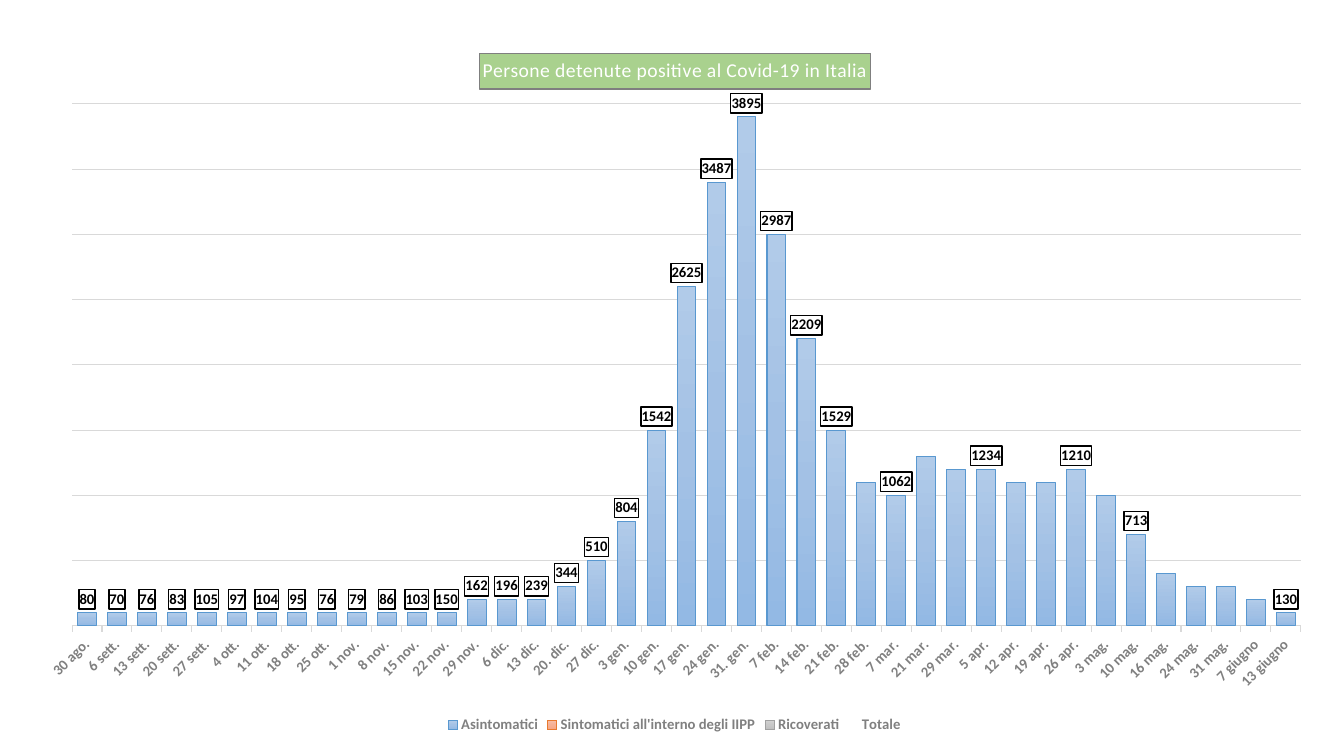
from copy import deepcopy
from dataclasses import dataclass

from lxml import etree
from pptx import Presentation
from pptx import util as u
from pptx.chart.data import CategoryChartData
from pptx.dml.color import RGBColor
from pptx.enum import chart as c
from pptx.oxml import parse_xml
from pptx.oxml.ns import nsdecls, qn

EMU_PER_PX = 914400 / 100.8
CHART_NS = nsdecls("c")


@dataclass(frozen=True)
class Box:
    left: int
    top: int
    width: int
    height: int


@dataclass(frozen=True)
class Column:
    name: str
    values: list[int]
    shades: tuple[str, str, str]
    outline: str


FRAME = Box(23, 34, 1303, 704)
PLOT = Box(72, 104, 1229, 522)
TITLE = Box(479, 53, 393, 37)

DATES = [
    "30 ago.", "6 sett.", "13 sett.", "20 sett.", "27 sett.", "4 ott.", "11 ott.",
    "18 ott.", "25 ott.", "1 nov.", "8 nov.", "15 nov.", "22 nov.", "29 nov.",
    "6 dic.", "13 dic.", "20. dic.", "27 dic.", "3 gen.", "10 gen.", "17 gen.",
    "24 gen.", "31. gen.", "7 feb.", "14 feb.", "21 feb.", "28 feb.", "7 mar.",
    "21 mar.", "29 mar.", "5 apr.", "12 apr.", "19 apr.", "26 apr.", "3 mag.",
    "10 mag.", "16 mag.", "24 mag.", "31 mag.", "7 giugno", "13 giugno",
]
TOTALS = [
    80, 70, 76, 83, 105, 97, 104, 95, 76, 79, 86, 103, 150, 162, 196, 239, 344, 510,
    804, 1542, 2625, 3487, 3895, 2987, 2209, 1529, 1160, 1062, 1341, 1208, 1234,
    1080, 1069, 1210, 1022, 713, 420, 302, 256, 164, 130,
]
ASYMPTOMATIC = [100] * 13 + [
    200, 200, 200, 300, 500, 800, 1500, 2600, 3400, 3900, 3000, 2200, 1500, 1100,
    1000, 1300, 1200, 1200, 1100, 1100, 1200, 1000, 700, 400, 300, 300, 200, 100,
]
NONE = [0] * len(DATES)
UNLABELLED = [26, 28, 29, 31, 32, 34, 36, 37, 38, 39]

COLUMNS = [
    Column("Asintomatici", ASYMPTOMATIC, ("B1CBE9", "A3C1E5", "93B9E4"), "5998D0"),
    Column("Sintomatici all'interno degli IIPP", NONE,
           ("F7BDA5", "F5B196", "F8A582"), "E87A30"),
    Column("Ricoverati", NONE, ("D2D2D2", "C8C8C8", "C0C0C0"), "A1A1A1"),
]


def px(length: int) -> int:
    return round(length * EMU_PER_PX)


def paint(color, value: str) -> None:
    color.rgb = RGBColor.from_string(value)


def set_line(line, color: str, width: float = 0.75) -> None:
    paint(line.color, color)
    line.width = u.Pt(width)


def set_font(font, size: float, color: str, bold: bool) -> None:
    font.name, font.size, font.bold = "Calibri", u.Pt(size), bold
    paint(font.color, color)


def place(element, box: Box, index: int, inner: bool = False) -> None:
    for layout in element.findall(qn("c:layout")):
        element.remove(layout)
    layout = etree.Element(qn("c:layout"))
    manual = etree.SubElement(layout, qn("c:manualLayout"))
    settings = {"layoutTarget": "inner"} if inner else {}
    settings |= {"xMode": "edge", "yMode": "edge"}
    settings["x"] = f"{(box.left - FRAME.left) / FRAME.width:.4f}"
    settings["y"] = f"{(box.top - FRAME.top) / FRAME.height:.4f}"
    if inner:
        settings["w"] = f"{box.width / FRAME.width:.4f}"
        settings["h"] = f"{box.height / FRAME.height:.4f}"
    for tag, value in settings.items():
        etree.SubElement(manual, qn(f"c:{tag}")).set("val", value)
    element.insert(index, layout)


def style_column(series, column: Column) -> None:
    fill = series.format.fill
    fill.gradient()
    fill.gradient_angle = 270
    first, middle, last = column.shades
    for stop, shade, position in zip(fill.gradient_stops, (first, last), (0, 1)):
        paint(stop.color, shade)
        stop.position = position
    stops = series._element.find(f".//{qn('a:gsLst')}")
    stops.insert(1, deepcopy(stops[0]))
    paint(fill.gradient_stops[1].color, middle)
    fill.gradient_stops[1].position = 0.5
    set_line(series.format.line, column.outline)


def style_totals(series) -> None:
    series.format.fill.background()
    series.format.line.fill.background()
    labels = series.data_labels
    labels.show_value = True
    labels.position = c.XL_LABEL_POSITION.INSIDE_BASE
    set_font(labels.font, 10.5, "000000", True)
    frame = parse_xml(
        f'<c:spPr {nsdecls("c", "a")}>'
        '<a:solidFill><a:srgbClr val="FFFFFF"/></a:solidFill>'
        '<a:ln w="12700"><a:solidFill><a:srgbClr val="000000"/></a:solidFill></a:ln>'
        "</c:spPr>"
    )
    labels._element.find(qn("c:txPr")).addprevious(frame)
    for position, index in enumerate(UNLABELLED):
        hidden = parse_xml(
            f'<c:dLbl {CHART_NS}><c:idx val="{index}"/><c:delete val="1"/></c:dLbl>'
        )
        labels._element.insert(position, hidden)


def style_title(chart) -> None:
    title = chart.chart_title
    para = title.text_frame.paragraphs[0]
    span = para.add_run()
    span.text = "Persone detenute positive al Covid-19 in Italia"
    set_font(para.font, 14, "FFFFFF", False)
    set_font(span.font, 14, "FFFFFF", False)
    span.font._element.set("spc", "20")
    title.format.fill.solid()
    paint(title.format.fill.fore_color, "A9D18E")
    set_line(title.format.line, "7F7F7F")
    place(title._element, TITLE, 1)


def style_axes(chart) -> None:
    dates = chart.category_axis
    dates.major_tick_mark = c.XL_TICK_MARK.OUTSIDE
    set_font(dates.tick_labels.font, 10.5, "808080", True)
    set_line(dates.format.line, "D9D9D9")
    dates._element.find(f"{qn('c:txPr')}/{qn('a:bodyPr')}").set("rot", "-2700000")
    people = chart.value_axis
    people.minimum_scale, people.maximum_scale, people.major_unit = 0, 4000, 500
    people.has_major_gridlines = True
    set_line(people.major_gridlines.format.line, "D9D9D9")
    people.visible = False


def add_cases_chart(page) -> None:
    data = CategoryChartData()
    data.categories = DATES
    for column in COLUMNS:
        data.add_series(column.name, column.values)
    data.add_series("Totale", TOTALS)
    chart = page.shapes.add_chart(
        c.XL_CHART_TYPE.COLUMN_STACKED,
        px(FRAME.left), px(FRAME.top), px(FRAME.width), px(FRAME.height), data,
    ).chart
    set_font(chart.font, 10, "000000", False)
    plot = chart.plots[0]
    plot.gap_width, plot.overlap, plot.vary_by_categories = 60, 100, False
    for series, column in zip(plot.series, COLUMNS):
        style_column(series, column)
    style_totals(plot.series[len(COLUMNS)])
    style_title(chart)
    style_axes(chart)
    chart.has_legend = True
    chart.legend.position = c.XL_LEGEND_POSITION.BOTTOM
    chart.legend.include_in_layout = False
    set_font(chart.legend.font, 10.5, "808080", True)
    place(chart._chartSpace.find(f".//{qn('c:plotArea')}"), PLOT, 0, inner=True)


def main() -> None:
    deck = Presentation()
    deck.slide_width, deck.slide_height = px(1344), px(756)
    page = deck.slides.add_slide(deck.slide_layouts[6])
    add_cases_chart(page)
    deck.save("out.pptx")


if __name__ == "__main__":
    main()
